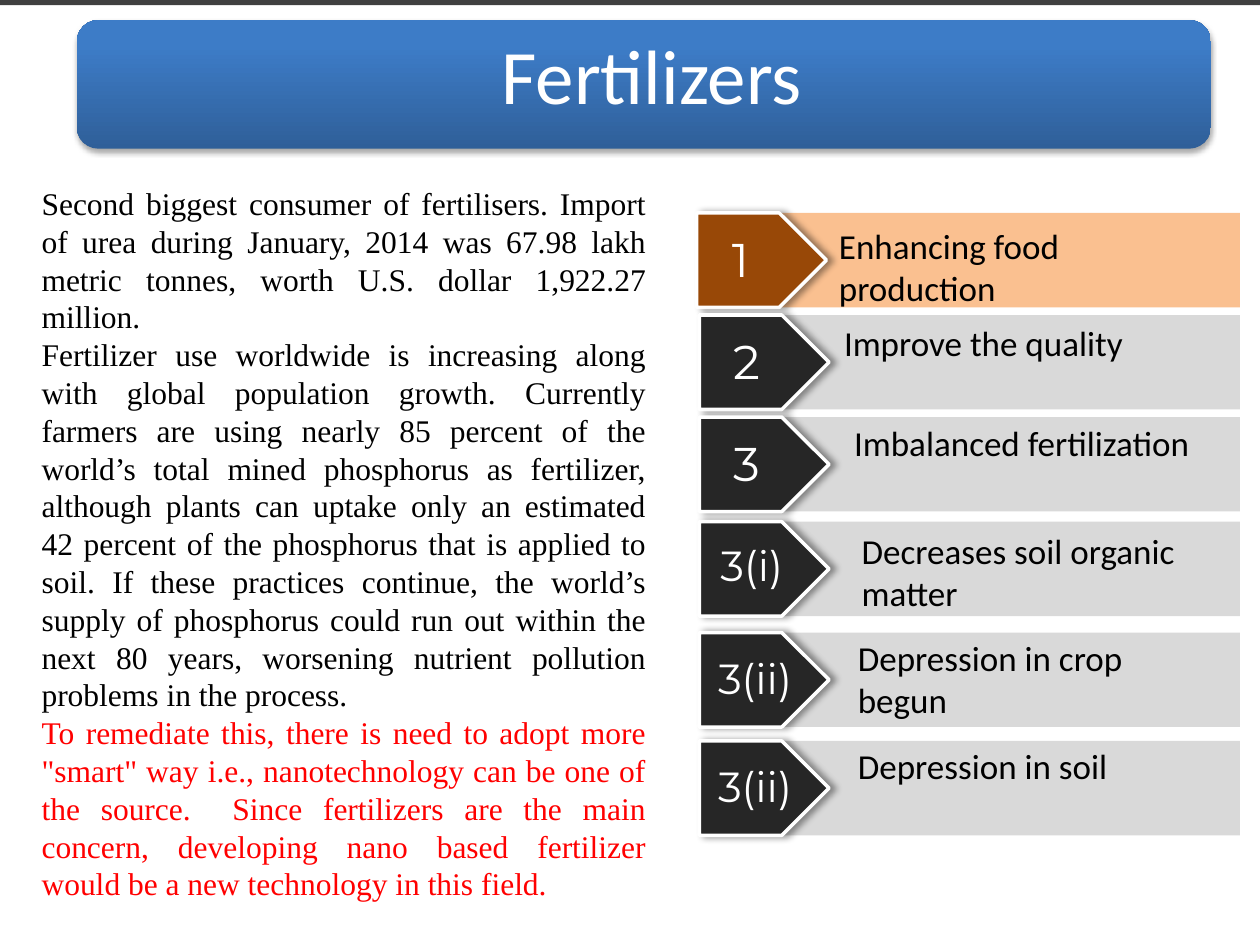
"""Build the Fertilizers slide."""
from typing import NamedTuple

from lxml import etree
from pptx import Presentation
from pptx import util as u
from pptx.dml.color import RGBColor
from pptx.enum import shapes, text
from pptx.oxml import ns

BLACK = RGBColor(0x00, 0x00, 0x00)
WHITE = RGBColor(0xFF, 0xFF, 0xFF)
RED = RGBColor(0xFF, 0x00, 0x00)
CHARCOAL = RGBColor(0x40, 0x40, 0x40)
DARK = RGBColor(0x26, 0x26, 0x26)
GREY = RGBColor(0xD9, 0xD9, 0xD9)
BROWN = RGBColor(0x98, 0x48, 0x07)
PEACH = RGBColor(0xFA, 0xC0, 0x90)
DEEP_BLUE = RGBColor(0x2F, 0x5F, 0x99)
BLUE = RGBColor(0x3D, 0x7C, 0xC7)


class Effect(NamedTuple):
    """Shadow with opacity in percent, lengths in points and angle in degrees."""
    opacity: int
    blur: float
    distance: float
    angle: int


class Row(NamedTuple):
    """Numbered row with its tag and label placement in inches."""
    top: float
    number: str
    tag_box: tuple
    tag_size: int
    label: str
    label_box: tuple
    arrow_left: float = 5.55
    arrow_fill: RGBColor = DARK
    band_fill: RGBColor = GREY


ARROW_SHADOW = Effect(40, 4, 3, 0)
BANNER_SHADOW = Effect(35, 3.1, 1.8, 90)

ROWS = [
    Row(1.69, "1", (5.71, 1.78, 0.5, 0.61), 27, "Enhancing food production",
        (6.56, 1.73, 2.95, 0.78), 5.53, BROWN, PEACH),
    Row(2.5, "2", (5.72, 2.59, 0.49, 0.61), 27, "Improve the quality",
        (6.6, 2.5, 2.91, 0.44)),
    Row(3.31, "3", (5.72, 3.4, 0.5, 0.61), 27, "Imbalanced fertilization",
        (6.68, 3.3, 2.95, 0.44)),
    Row(4.14, "3(i)", (5.62, 4.23, 0.8, 0.51), 24, "Decreases soil organic matter",
        (6.74, 4.15, 2.95, 0.77)),
    Row(5.02, "3(ii)", (5.6, 5.13, 0.91, 0.5), 24, "Depression in crop begun",
        (6.71, 5, 2.94, 0.77)),
    Row(5.88, "3(ii)", (5.6, 5.99, 0.91, 0.5), 24, "Depression in soil",
        (6.71, 5.86, 2.94, 0.44)),
]

PARAGRAPHS = [
    ("Second biggest consumer of fertilisers. Import of urea during January, 2014 was "
     "67.98 lakh metric tonnes, worth U.S. dollar 1,922.27 million.", BLACK),
    ("Fertilizer use worldwide is increasing along with global population growth. "
     "Currently farmers are using nearly 85 percent of the world’s total mined phosphorus "
     "as fertilizer, although plants can uptake only an estimated 42 percent of the "
     "phosphorus that is applied to soil. If these practices continue, the world’s supply "
     "of phosphorus could run out within the next 80 years, worsening nutrient pollution "
     "problems in the process.", BLACK),
    ("To remediate this, there is need to adopt more \"smart\" way i.e., nanotechnology can "
     "be one of the source.  Since fertilizers are the main concern, developing nano based "
     "fertilizer would be a new technology in this field.", RED),
]


class SlideBuilder:
    """Holds the text style and the current slide."""
    heading_font = "Calibri"
    number_font = "Montserrat"
    body_font = "Times New Roman"

    def __init__(self, slide):
        self.slide = slide

    def place(self, shape, box):
        """Move a shape to a box given in inches."""
        shape.left, shape.top, shape.width, shape.height = map(u.Inches, box)

    def style(self, paragraph, font_name, size, color):
        """Format every run of a paragraph."""
        for run in paragraph.runs:
            run.font.name = font_name
            run.font.size = u.Pt(size)
            run.font.color.rgb = color

    def box(self, parent, kind, box, fill=None, line=None, effect=None):
        """Add a preset shape with an optional outline and shadow."""
        shape = parent.add_shape(kind, *map(u.Inches, box))
        if fill is not None:
            shape.fill.solid()
            shape.fill.fore_color.rgb = fill
        if line is None:
            shape.line.fill.background()
        else:
            shape.line.color.rgb = line
            shape.line.width = u.Pt(2)
        shape.shadow.inherit = False
        if effect:
            self.shadow(shape, effect)
        return shape

    def shadow(self, shape, effect):
        """Give a shape an outer shadow."""
        effects = shape.element.find(".//" + ns.qn("a:effectLst"))
        outer = etree.SubElement(
            effects, ns.qn("a:outerShdw"), blurRad=str(u.Pt(effect.blur)),
            dist=str(u.Pt(effect.distance)), dir=str(effect.angle * 60000),
            algn="ctr", rotWithShape="0")
        color = etree.SubElement(outer, ns.qn("a:srgbClr"), val=str(BLACK))
        etree.SubElement(color, ns.qn("a:alpha"), val=str(effect.opacity * 1000))

    def label(self, parent, box, words, font_name, size, color, wrap):
        """Add a one-paragraph text box."""
        frame = parent.add_textbox(*map(u.Inches, box)).text_frame
        frame.word_wrap = wrap
        frame.text = words
        self.style(frame.paragraphs[0], font_name, size, color)

    def row(self, row):
        """Add a grouped band with its numbered arrow and label."""
        parent = self.slide.shapes.add_group_shape().shapes
        self.box(parent, shapes.MSO_SHAPE.RECTANGLE, (6.16, row.top, 3.68, 0.75),
                 row.band_fill)
        self.box(parent, shapes.MSO_SHAPE.PENTAGON, (row.arrow_left, row.top, 1.03, 0.75),
                 row.arrow_fill, WHITE, ARROW_SHADOW)
        self.label(parent, row.tag_box, row.number, self.number_font, row.tag_size,
                   WHITE, False)
        self.label(parent, row.label_box, row.label, self.heading_font, 20, BLACK, True)

    def banner(self, words):
        """Add the gradient banner and put the title on it."""
        banner = self.box(self.slide.shapes, shapes.MSO_SHAPE.ROUNDED_RECTANGLE,
                          (0.61, 0.16, 9, 1.02), effect=BANNER_SHADOW)
        banner.fill.gradient()
        banner.fill.gradient_angle = 90
        for stop, position, color in zip(banner.fill.gradient_stops, (0, 0.8),
                                         (DEEP_BLUE, BLUE)):
            stop.position = position
            stop.color.rgb = color
        title = self.slide.shapes.title
        self.place(title, (0.66, 0.21, 8.89, 0.84))
        banner.element.addnext(title.element)
        frame = title.text_frame
        frame.text = words
        frame.auto_size = text.MSO_AUTO_SIZE.NONE
        frame.vertical_anchor = text.MSO_ANCHOR.MIDDLE
        frame.margin_left = frame.margin_right = u.Inches(0.18)
        frame.margin_top = frame.margin_bottom = u.Inches(0.18)
        paragraph = frame.paragraphs[0]
        paragraph.alignment = text.PP_ALIGN.CENTER
        paragraph.line_spacing = 0.9
        self.style(paragraph, self.heading_font, 44, WHITE)

    def body(self, paragraphs):
        """Fill the body placeholder with justified, unbulleted paragraphs."""
        body = self.slide.placeholders[1]
        self.place(body, (0.23, 1.41, 5, 6.16))
        frame = body.text_frame
        frame.text = "\n".join(words for words, _ in paragraphs)
        frame.auto_size = text.MSO_AUTO_SIZE.NONE
        for paragraph, (_, color) in zip(frame.paragraphs, paragraphs):
            paragraph.alignment = text.PP_ALIGN.JUSTIFY
            paragraph.space_before = u.Pt(0)
            self.style(paragraph, self.body_font, 18, color)
            properties = paragraph.runs[0].font and paragraph.element.get_or_add_pPr() \
                if hasattr(paragraph, "element") else paragraph._p.get_or_add_pPr()
            properties.set("marL", "0")
            properties.set("indent", "0")
            etree.SubElement(properties, ns.qn("a:buNone"))


def main():
    """Assemble and save the presentation."""
    presentation = Presentation()
    presentation.slide_width = u.Inches(10)
    presentation.slide_height = u.Inches(7.5)
    builder = SlideBuilder(presentation.slides.add_slide(presentation.slide_layouts[1]))
    builder.box(builder.slide.shapes, shapes.MSO_SHAPE.RECTANGLE, (0, -0.01, 10, 0.05),
                CHARCOAL)
    builder.banner(" Fertilizers")
    builder.body(PARAGRAPHS)
    for row in ROWS:
        builder.row(row)
    presentation.save("out.pptx")


if __name__ == "__main__":
    main()
